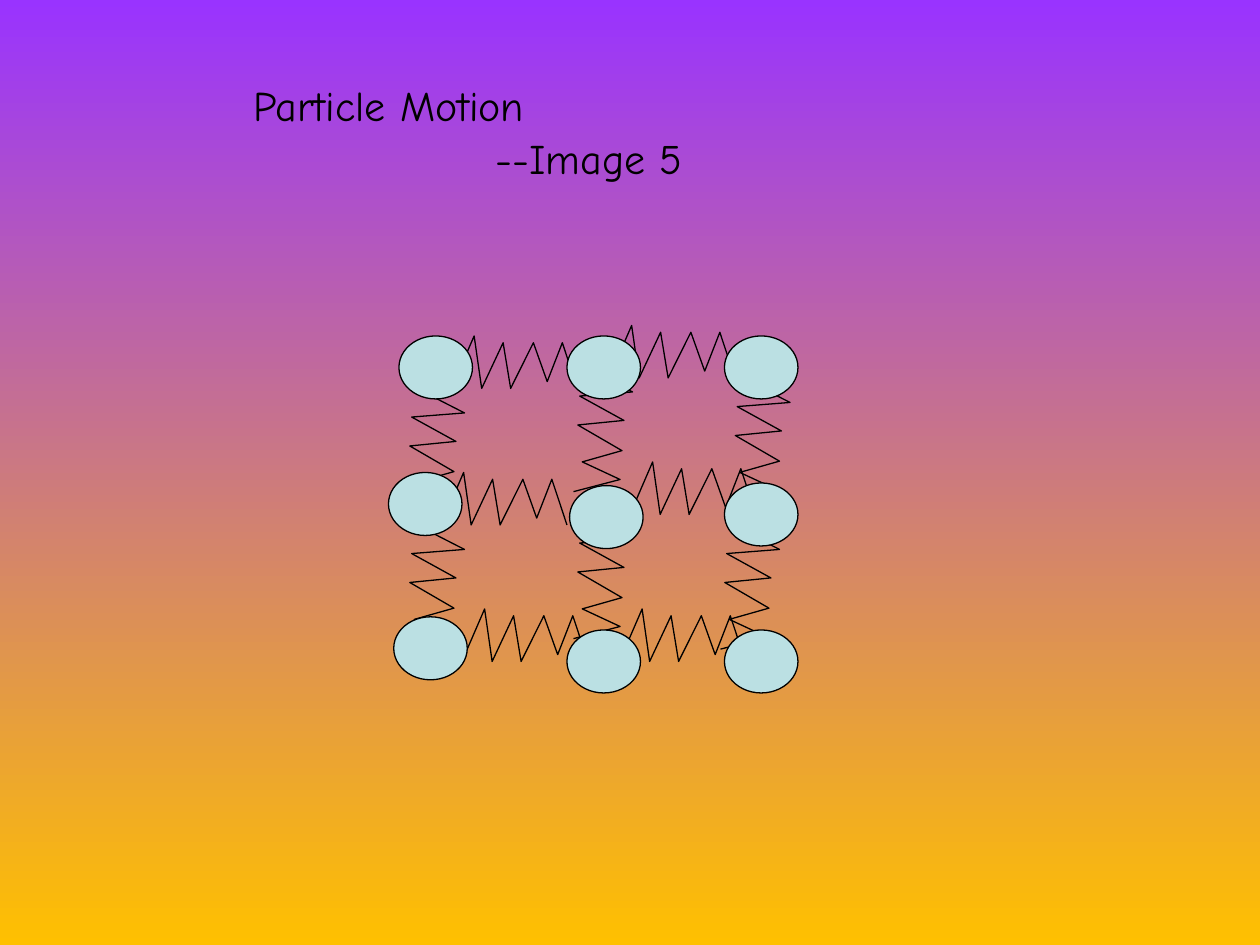
from typing import NamedTuple

from pptx import Presentation
from pptx import util as u
from pptx.dml.color import RGBColor
from pptx.enum import shapes, text

BLACK = RGBColor(0x00, 0x00, 0x00)
PALE_BLUE = RGBColor(0xBB, 0xE0, 0xE3)
PURPLE = RGBColor(0x99, 0x33, 0xFF)
AMBER = RGBColor(0xFF, 0xC0, 0x00)

FONT = "Comic Neue"
COLUMNS, ROWS = 120, 90
SLIDE_WIDTH, SLIDE_HEIGHT = u.Inches(10), u.Inches(7.5)

PARTICLE_SIZE = (7, 6)
SPRING_SIZE = (12, 5)
VERTICAL_TURN = 93.7
# Zigzag corners as shares of the spring's length and height
ZIGZAG = [(0, 1), (0.18, 0), (0.24, 1), (0.41, 0.13), (0.47, 1),
          (0.65, 0.13), (0.76, 0.87), (0.88, 0.13), (1, 1)]


class Spot(NamedTuple):
    """Left and top corner in grid columns and rows."""
    column: float
    row: float


class Caption(NamedTuple):
    wording: str
    spot: Spot
    columns: float


HORIZONTAL_SPRINGS = [Spot(43, 32), Spot(58, 31), Spot(42, 45),
                      Spot(60, 44), Spot(44, 58), Spot(59, 58)]
VERTICAL_SPRINGS = [Spot(35.5, 40.5), Spot(51.5, 38.5), Spot(66.5, 39.5),
                    Spot(35.5, 53.5), Spot(51.5, 52.5), Spot(65.5, 53.5)]
PARTICLES = [Spot(38, 32), Spot(54, 32), Spot(69, 32),
             Spot(37, 45), Spot(54.25, 46.25), Spot(69, 46),
             Spot(37.5, 58.75), Spot(54, 60), Spot(69, 60)]
CAPTIONS = [Caption("--Image 5", Spot(46, 12), 38),
            Caption("Particle Motion", Spot(23, 7), 65)]


def across(columns: float) -> int:
    return round(SLIDE_WIDTH * columns / COLUMNS)


def down(rows: float) -> int:
    return round(SLIDE_HEIGHT * rows / ROWS)


def outline(shape) -> None:
    shape.shadow.inherit = False
    shape.line.color.rgb = BLACK
    shape.line.width = u.Pt(0.75)


def draw_spring(slide, spot: Spot, turn: float = 0) -> None:
    length, height = SPRING_SIZE
    start, *corners = [(across(spot.column + x * length),
                        down(spot.row + y * height)) for x, y in ZIGZAG]
    builder = slide.shapes.build_freeform(*start)
    builder.add_line_segments(corners, close=False)
    spring = builder.convert_to_shape()
    spring.fill.background()
    spring.rotation = turn
    outline(spring)


def draw_particle(slide, spot: Spot) -> None:
    width, height = PARTICLE_SIZE
    particle = slide.shapes.add_shape(
        shapes.MSO_SHAPE.OVAL, across(spot.column), down(spot.row),
        across(width), down(height))
    particle.fill.solid()
    particle.fill.fore_color.rgb = PALE_BLUE
    outline(particle)


def write_caption(slide, caption: Caption) -> None:
    box = slide.shapes.add_textbox(
        across(caption.spot.column), down(caption.spot.row),
        across(caption.columns), down(6))
    frame = box.text_frame
    frame.word_wrap = True
    frame.auto_size = text.MSO_AUTO_SIZE.SHAPE_TO_FIT_TEXT
    run = frame.paragraphs[0].add_run()
    run.text = caption.wording
    run.font.name = FONT
    run.font.size = u.Pt(24)
    run.font.color.rgb = BLACK


def paint_background(slide) -> None:
    fill = slide.background.fill
    fill.gradient()
    fill.gradient_angle = 270
    for stop, color, position in zip(fill.gradient_stops, (PURPLE, AMBER), (0, 1)):
        stop.color.rgb = color
        stop.position = position


def main() -> None:
    deck = Presentation()
    deck.slide_width, deck.slide_height = SLIDE_WIDTH, SLIDE_HEIGHT
    slide = deck.slides.add_slide(deck.slide_layouts[6])
    paint_background(slide)
    for spot in HORIZONTAL_SPRINGS:
        draw_spring(slide, spot)
    for spot in VERTICAL_SPRINGS:
        draw_spring(slide, spot, VERTICAL_TURN)
    for spot in PARTICLES:
        draw_particle(slide, spot)
    for caption in CAPTIONS:
        write_caption(slide, caption)
    deck.save("out.pptx")


if __name__ == "__main__":
    main()
